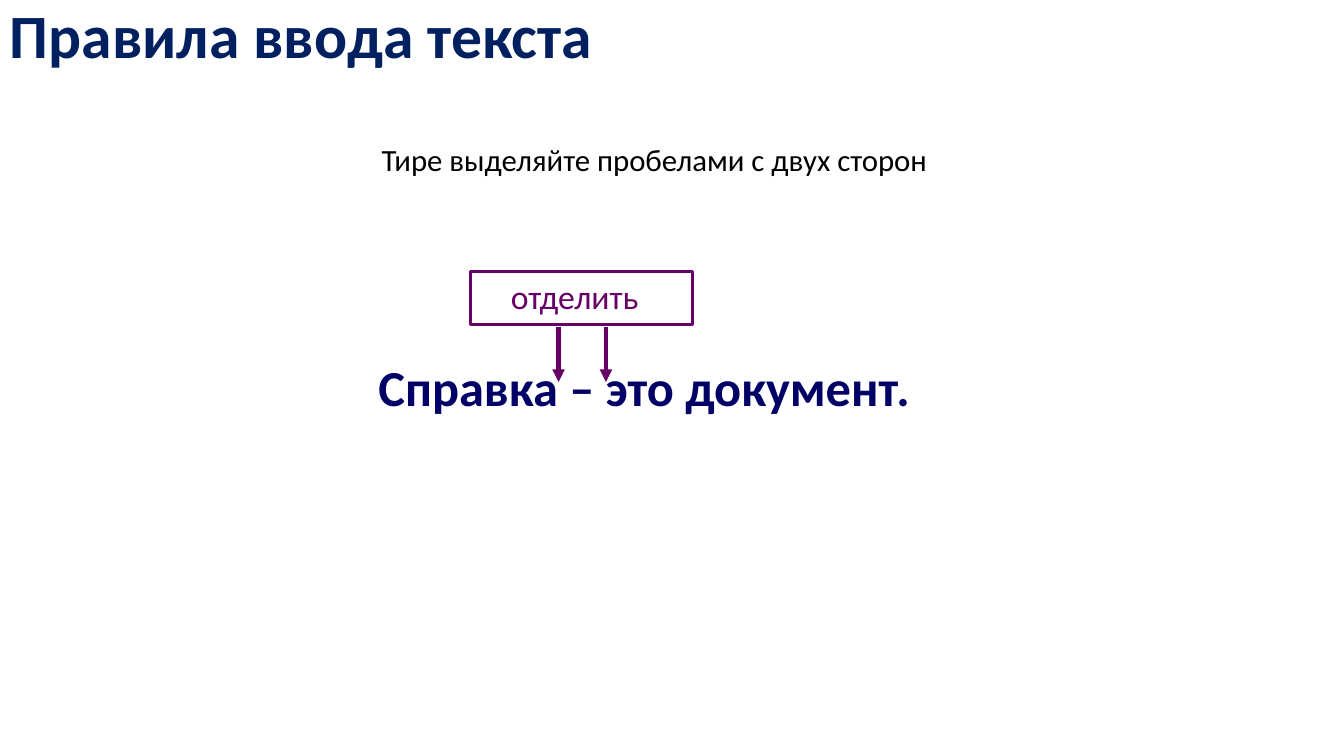
from lxml import etree
from pptx import Presentation, util as u
from pptx.dml.color import RGBColor
from pptx.enum import shapes, text
from pptx.oxml.ns import qn

NAVY, INDIGO, PURPLE, BLACK = "002060", "000066", "660066", "000000"


def rgb(value):
    """Return the colour for a hex string."""
    return RGBColor.from_string(value)


def write(sp, words, size, color, bold=False, align=text.PP_ALIGN.CENTER):
    """Set and format the single paragraph of a shape."""
    tf = sp.text_frame
    tf.word_wrap = True
    tf.text = words
    p = tf.paragraphs[0]
    p.alignment = align
    r = p.runs[0]
    r.font.name, r.font.size, r.font.bold = "Calibri", u.Pt(size), bold
    r.font.color.rgb = rgb(color)
    return tf


def add_text(s, box, *args, **kwargs):
    """Add a text box in the given box."""
    sp = s.shapes.add_textbox(*map(u.Inches, box))
    return write(sp, *args, **kwargs)


def add_arrow(s, x, top, length):
    """Add a purple arrow pointing down."""
    sp = s.shapes.add_connector(
        shapes.MSO_CONNECTOR.STRAIGHT,
        *map(u.Inches, (x, top, x, top + length)))
    sp.line.color.rgb = rgb(PURPLE)
    sp.line.width = u.Pt(3)
    etree.SubElement(sp.line._get_or_add_ln(), qn("a:tailEnd"), type="triangle")
    etree.SubElement(sp._element.spPr, qn("a:effectLst"))


def add_title(s, box):
    """Add the slide heading."""
    tf = add_text(s, box, "Правила ввода текста", 44, NAVY, True,
                  text.PP_ALIGN.LEFT)
    tf.vertical_anchor = text.MSO_ANCHOR.MIDDLE
    tf.paragraphs[0].line_spacing = 0.9


def add_rule(s, box):
    """Add the rule about dashes."""
    tf = add_text(s, box, "Тире выделяйте пробелами с двух сторон", 22, BLACK)
    tf.margin_left = u.Inches(0.16)


def add_example(s, box):
    """Add the sample sentence with a label whose arrows mark its spaces."""
    x, y, w, h = box
    sentence_h = 0.7
    add_text(s, (x, y + h - sentence_h, w, sentence_h),
             "Справка – это документ.", 36, INDIGO, True)
    sp = s.shapes.add_shape(
        shapes.MSO_SHAPE.RECTANGLE,
        *map(u.Inches, (x + 2.02, y, 2.2, 0.53)))
    sp.shadow.inherit = False
    sp.fill.background()
    sp.line.color.rgb = rgb(PURPLE)
    sp.line.width = u.Pt(2.25)
    tf = write(sp, "отделить", 24, PURPLE)
    tf.vertical_anchor = text.MSO_ANCHOR.TOP
    tf.margin_right = u.Inches(0.24)
    for dx in (2.89, 3.36):
        add_arrow(s, x + dx, y + 0.55, 0.55)


def main():
    """Build and save the slide."""
    prs = Presentation()
    prs.slide_width, prs.slide_height = u.Inches(13.33), u.Inches(7.5)
    s = prs.slides.add_slide(prs.slide_layouts[6])
    add_title(s, (0, 0, 11.5, 0.76))
    add_example(s, (2.65, 2.69, 7.48, 1.49))
    add_rule(s, (2.13, 1.35, 8.66, 0.47))
    prs.save("out.pptx")


if __name__ == "__main__":
    main()
